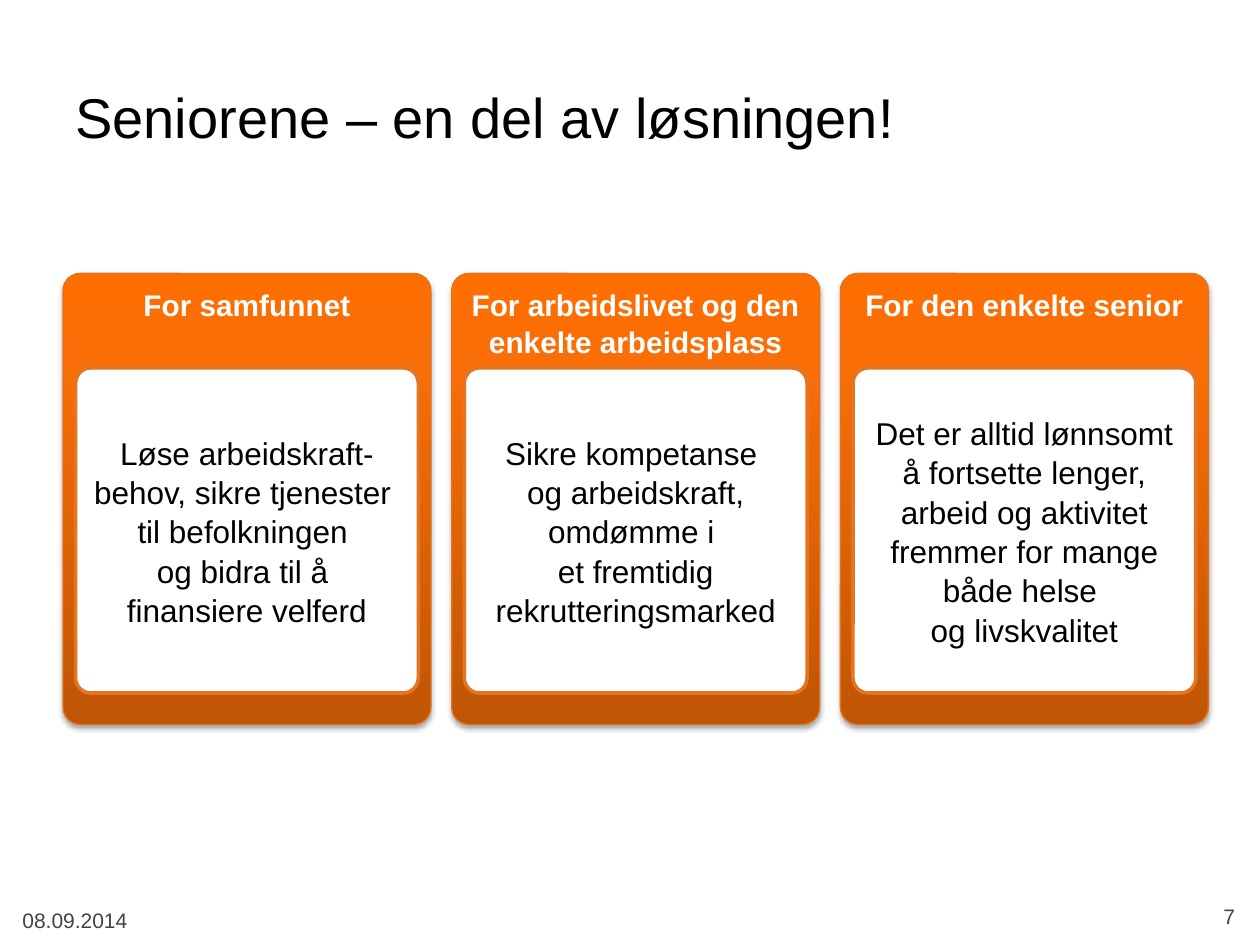
from lxml.etree import SubElement
from pptx import Presentation
from pptx.dml.color import RGBColor
from pptx.enum.shapes import MSO_SHAPE
from pptx.enum.text import MSO_ANCHOR, PP_ALIGN
from pptx.oxml import parse_xml
from pptx.oxml.ns import nsdecls, qn
from pptx.util import Inches, Pt

# Grid in inches: three equal columns
LEFT, PITCH = 0.5, 3.085
CARD_TOP, CARD_WIDTH, CARD_HEIGHT = 2.17, 2.92, 3.58
PANEL_INSET, PANEL_TOP, PANEL_HEIGHT = 0.1, 2.92, 2.58
CORNER = 0.047
GRADIENT = [(0, "C05505"), (80, "F96E06"), (100, "FF6E01")]

# Heading, then body; \n starts a paragraph, \v breaks a line
CARDS = [
    ("For samfunnet",
     "Løse arbeidskraft-behov, sikre tjenester \vtil befolkningen \v"
     "og bidra til å \vfinansiere velferd"),
    ("For arbeidslivet og den\nenkelte arbeidsplass",
     "Sikre kompetanse \vog arbeidskraft, omdømme i \v"
     "et fremtidig rekrutteringsmarked"),
    ("For den enkelte senior",
     "Det er alltid lønnsomt å fortsette lenger, arbeid og aktivitet "
     "fremmer for mange både helse \vog livskvalitet"),
]


def color(value):
    return RGBColor.from_string(value)


def write(shape, text, size=18, ink="000000", bold=False, align=PP_ALIGN.LEFT,
          anchor=MSO_ANCHOR.TOP, spacing=1.0):
    frame = shape.text_frame
    frame.word_wrap = True
    frame.vertical_anchor = anchor
    frame.text = text
    for paragraph in frame.paragraphs:
        paragraph.alignment = align
        paragraph.line_spacing = spacing
        for run in paragraph.runs:
            run.font.name = "Arial"
            run.font.size = Pt(size)
            run.font.bold = bold
            run.font.color.rgb = color(ink)


presentation = Presentation()
presentation.slide_width, presentation.slide_height = Inches(10), Inches(7.5)
slide = presentation.slides.add_slide(presentation.slide_layouts[6])
shapes = slide.shapes

# Title
title = shapes.add_textbox(Inches(LEFT), Inches(0.3), Inches(7), Inches(1.25))
write(title, "Seniorene – en del av løsningen!", size=32, anchor=MSO_ANCHOR.MIDDLE)

for column, (heading, body) in enumerate(CARDS):
    left = LEFT + column * PITCH

    # Orange card with heading
    card = shapes.add_shape(MSO_SHAPE.ROUNDED_RECTANGLE, Inches(left), Inches(CARD_TOP),
                            Inches(CARD_WIDTH), Inches(CARD_HEIGHT))
    card.adjustments[0] = CORNER
    card.line.color.rgb = color("E4731E")
    card.line.width = Pt(0.75)
    card.fill.gradient()
    card.fill.gradient_angle = 90
    stops = card.fill._fill._gradFill.find(qn("a:gsLst"))
    for stop in list(stops):
        stops.remove(stop)
    for position, shade in GRADIENT:
        stop = SubElement(stops, qn("a:gs"), pos=str(position * 1000))
        SubElement(stop, qn("a:srgbClr"), val=shade)

    # Soft shadow below the card
    card.shadow.inherit = False
    effects = card._element.spPr.find(qn("a:effectLst"))
    effects.append(parse_xml(
        f'<a:outerShdw {nsdecls("a")} blurRad="{Pt(3.1)}" dist="{Pt(1.8)}" '
        'dir="5400000" rotWithShape="0"><a:srgbClr val="000000">'
        '<a:alpha val="35000"/></a:srgbClr></a:outerShdw>'))
    write(card, heading, size=17, ink="FFFFFF", bold=True, align=PP_ALIGN.CENTER,
          spacing=1.05)

    # White panel with body text
    panel = shapes.add_shape(MSO_SHAPE.ROUNDED_RECTANGLE, Inches(left + PANEL_INSET),
                             Inches(PANEL_TOP), Inches(CARD_WIDTH - 2 * PANEL_INSET),
                             Inches(PANEL_HEIGHT))
    panel.adjustments[0] = CORNER
    panel.shadow.inherit = False
    panel.fill.solid()
    panel.fill.fore_color.rgb = color("FFFFFF")
    panel.line.color.rgb = color("E47623")
    panel.line.width = Pt(2)
    write(panel, body, align=PP_ALIGN.CENTER, anchor=MSO_ANCHOR.MIDDLE, spacing=1.04)

# Footer: date and page number
for left, top, text, align in [(0.08, 7.15, "08.09.2014", PP_ALIGN.LEFT),
                               (7.57, 7.12, "7", PP_ALIGN.RIGHT)]:
    footer = shapes.add_textbox(Inches(left), Inches(top), Inches(2.33), Inches(0.52))
    write(footer, text, size=12, ink="424342", align=align)

presentation.save("out.pptx")
